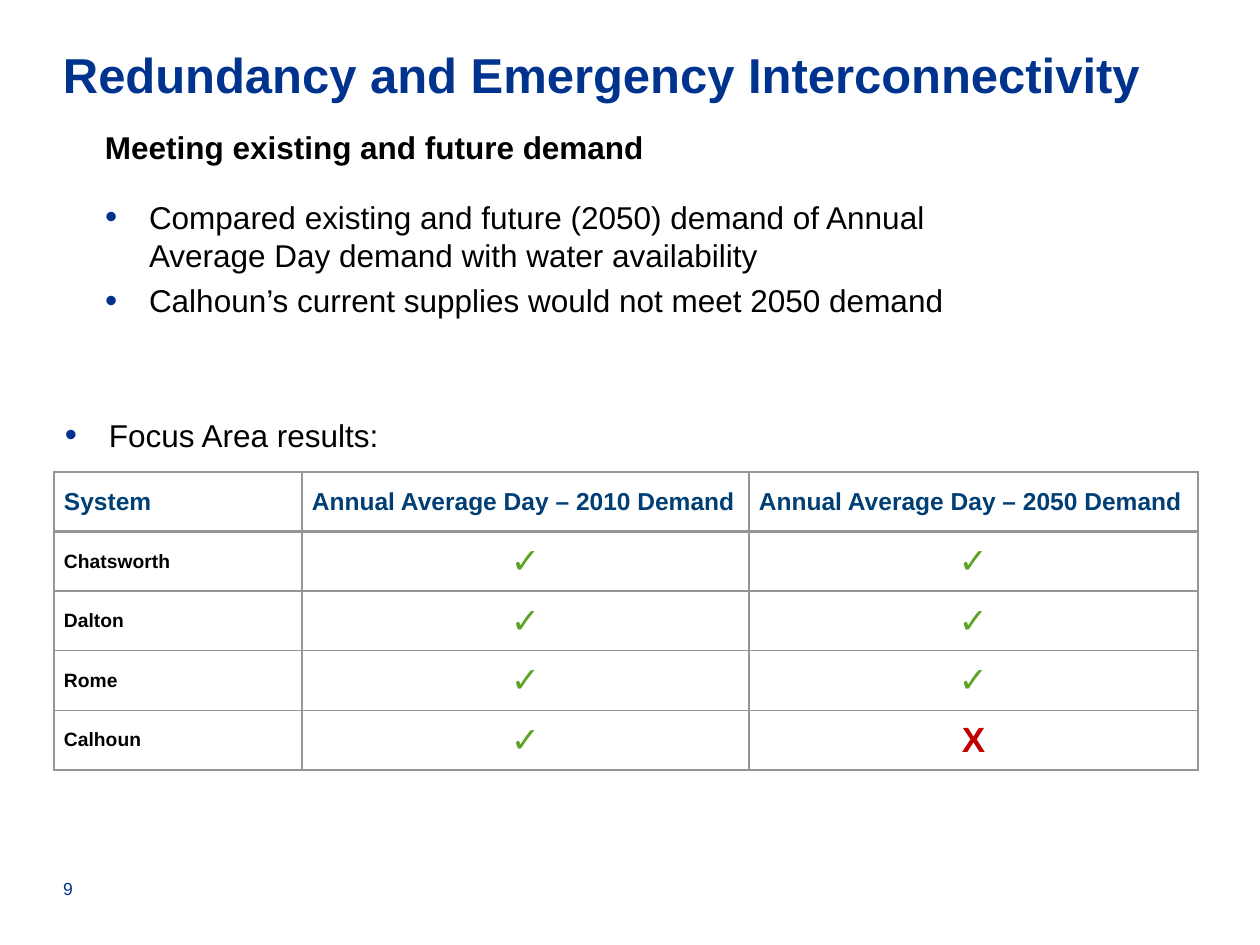
from dataclasses import dataclass

from lxml.etree import SubElement
from pptx import Presentation
from pptx.dml.color import RGBColor
from pptx.enum.text import MSO_ANCHOR, PP_ALIGN
from pptx.oxml.ns import qn
from pptx.util import Emu, Pt


@dataclass(frozen=True)
class Theme:
    """Colours, font and type sizes of the slide."""
    font: str = "Arial"
    blue: str = "00338D"
    header: str = "003F75"
    black: str = "000000"
    white: str = "FFFFFF"
    rule: str = "939598"
    green: str = "5FA326"
    red: str = "C00000"
    title: int = 28
    body: int = 18
    heading: int = 14
    label: int = 11
    mark: int = 20
    small: int = 10


def px(length):
    """Turn pixels, 126 to the inch, into EMU."""
    return Emu(round(length * 914400 / 126))


class SlideBuilder:
    """Holds the theme and the current slide."""

    def __init__(self, deck, theme):
        """Start a blank slide."""
        self.theme = theme
        self.slide = deck.slides.add_slide(deck.slide_layouts[6])

    def run(self, paragraph, text, size, color, bold=False):
        """Add one styled run."""
        run = paragraph.add_run()
        run.text = text
        run.font.name = self.theme.font
        run.font.size = Pt(size)
        run.font.bold = bold
        run.font.color.rgb = RGBColor.from_string(color)

    def bullet(self, paragraph):
        """Give a paragraph a hanging bullet."""
        properties = paragraph._p.get_or_add_pPr()
        properties.set("marL", str(px(44)))
        properties.set("indent", str(-px(44)))
        color = SubElement(properties, qn("a:buClr"))
        SubElement(color, qn("a:srgbClr"), val=self.theme.blue)
        SubElement(properties, qn("a:buSzPct"), val="110000")
        SubElement(properties, qn("a:buFont"), typeface=self.theme.font)
        SubElement(properties, qn("a:buChar"), char="•")

    def text(self, box, lines, size, color, bold=False, bulleted=False,
             anchor=MSO_ANCHOR.TOP):
        """Add a text box with one paragraph per line."""
        frame = self.slide.shapes.add_textbox(*map(px, box)).text_frame
        frame.word_wrap = True
        frame.vertical_anchor = anchor
        frame.margin_left = frame.margin_right = 0
        frame.margin_top = frame.margin_bottom = 0
        for index, line in enumerate(lines):
            paragraph = frame.add_paragraph() if index else frame.paragraphs[0]
            if bulleted:
                self.bullet(paragraph)
            if index:
                paragraph.space_before = Pt(4.5)
            self.run(paragraph, line, size, color, bold)

    def borders(self, cell, top, bottom):
        """Rule all four sides of a cell."""
        properties = cell._tc.get_or_add_tcPr()
        widths = {"a:lnL": 1, "a:lnR": 1, "a:lnT": top, "a:lnB": bottom}
        for side, width in widths.items():
            line = SubElement(properties, qn(side), w=str(Pt(width)))
            fill = SubElement(line, qn("a:solidFill"))
            SubElement(fill, qn("a:srgbClr"), val=self.theme.rule)

    def table(self, box, widths, rows):
        """Add a ruled table with a heading row and centred marks."""
        theme = self.theme
        mark_colors = {"✓": theme.green, "X": theme.red}
        table = self.slide.shapes.add_table(
            len(rows), len(widths), *map(px, box)).table
        table.first_row = table.horz_banding = False
        for column, width in zip(table.columns, widths):
            column.width = px(width)
        for row, values in enumerate(rows):
            for column, value in enumerate(values):
                cell = table.cell(row, column)
                cell.vertical_anchor = MSO_ANCHOR.MIDDLE
                cell.margin_left = cell.margin_right = px(10)
                cell.margin_top = cell.margin_bottom = px(6)
                self.borders(cell, 2.25 if row == 1 else 1,
                             2.25 if row == 0 else 1)
                cell.fill.solid()
                cell.fill.fore_color.rgb = RGBColor.from_string(theme.white)
                paragraph = cell.text_frame.paragraphs[0]
                if row == 0:
                    size, color = theme.heading, theme.header
                elif column == 0:
                    size, color = theme.label, theme.black
                else:
                    size, color = theme.mark, mark_colors[value]
                    paragraph.alignment = PP_ALIGN.CENTER
                self.run(paragraph, value, size, color, bold=True)


def main():
    """Build and save the slide."""
    deck = Presentation()
    deck.slide_width, deck.slide_height = px(1260), px(945)
    theme = Theme()
    page = SlideBuilder(deck, theme)
    page.text((63, 35, 1134, 78),
              ["Redundancy and Emergency Interconnectivity"],
              theme.title, theme.blue, bold=True, anchor=MSO_ANCHOR.MIDDLE)
    page.text((105, 128, 557, 92), ["Meeting existing and future demand"],
              theme.body, theme.black, bold=True)
    page.text((105, 198, 903, 198),
              ["Compared existing and future (2050) demand of Annual "
               "Average Day demand with water availability",
               "Calhoun’s current supplies would not meet 2050 demand"],
              theme.body, theme.black, bulleted=True)
    page.text((65, 416, 557, 79), ["Focus Area results:"],
              theme.body, theme.black, bulleted=True)
    page.text((63, 849, 110, 50), ["9"], theme.small, theme.blue,
              anchor=MSO_ANCHOR.BOTTOM)
    page.table((54, 472, 1144, 298), (248, 447, 449), [
        ("System", "Annual Average Day – 2010 Demand",
         "Annual Average Day – 2050 Demand"),
        ("Chatsworth", "✓", "✓"),
        ("Dalton", "✓", "✓"),
        ("Rome", "✓", "✓"),
        ("Calhoun", "✓", "X"),
    ])
    deck.save("out.pptx")


if __name__ == "__main__":
    main()
